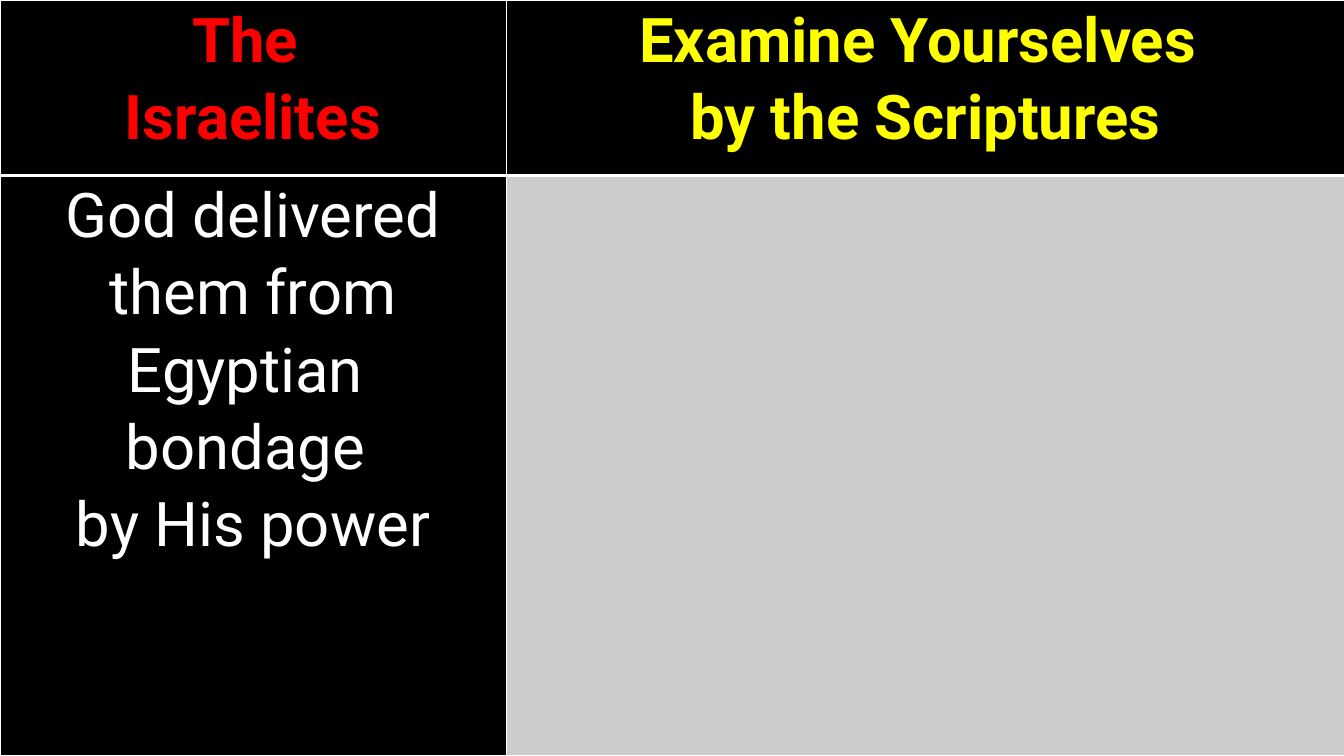
from lxml import etree
from pptx import Presentation
from pptx.dml.color import RGBColor
from pptx.enum.text import PP_ALIGN
from pptx.oxml.ns import qn
from pptx.util import Inches, Pt

CENTER = PP_ALIGN.CENTER
BLACK, WHITE, GRAY = "000000", "FFFFFF", "CCCCCC"
RED, YELLOW = "FF0000", "FFFF00"


def rgb(value):
    return RGBColor.from_string(value)


def add_borders(cell, widths):
    """Draw white cell edges; widths are points for left, right, top, bottom."""
    properties = cell._tc.get_or_add_tcPr()
    for position, (side, width) in enumerate(zip("LRTB", widths)):
        edge = etree.Element(qn(f"a:ln{side}"), w=str(Pt(width)))
        edge_fill = etree.SubElement(edge, qn("a:solidFill"))
        etree.SubElement(edge_fill, qn("a:srgbClr"), val=WHITE)
        properties.insert(position, edge)


# Slide with a black background
prs = Presentation()
prs.slide_width, prs.slide_height = Inches(13.33), Inches(7.5)
slide = prs.slides.add_slide(prs.slide_layouts[6])
slide.background.fill.solid()
slide.background.fill.fore_color.rgb = rgb(BLACK)

# Comparison table covering the slide
comparison = slide.shapes.add_table(2, 2, 0, 0, prs.slide_width, prs.slide_height).table
for column, width in zip(comparison.columns, (5.02, 8.32)):
    column.width = Inches(width)
for row, height in zip(comparison.rows, (1.74, 5.76)):
    row.height = Inches(height)

# Each cell: lines of text, text colour, fill
contents = [
    [(["The ", "Israelites"], RED, BLACK),
     (["Examine Yourselves ", "by the Scriptures"], YELLOW, BLACK)],
    [(["God delivered them from Egyptian ", "bondage ", "by His power"], WHITE, BLACK),
     ([], WHITE, GRAY)],
]
row_borders = [(1, 1, 1, 3), (1, 1, 3, 1)]

for row_index, row_contents in enumerate(contents):
    for column_index, (lines, text_color, fill_color) in enumerate(row_contents):
        cell = comparison.cell(row_index, column_index)
        cell.fill.solid()
        cell.fill.fore_color.rgb = rgb(fill_color)
        add_borders(cell, row_borders[row_index])
        cell.margin_left = cell.margin_right = Inches(0.07)
        cell.margin_top = cell.margin_bottom = 0
        if not lines:
            continue
        cell.text = "\n".join(lines)
        for paragraph in cell.text_frame.paragraphs:
            paragraph.alignment = CENTER
            paragraph.line_spacing = 1.07
            paragraph.font.name = "Roboto"
            paragraph.font.size = Pt(44)
            paragraph.font.bold = row_index == 0
            paragraph.font.color.rgb = rgb(text_color)

prs.save("out.pptx")
